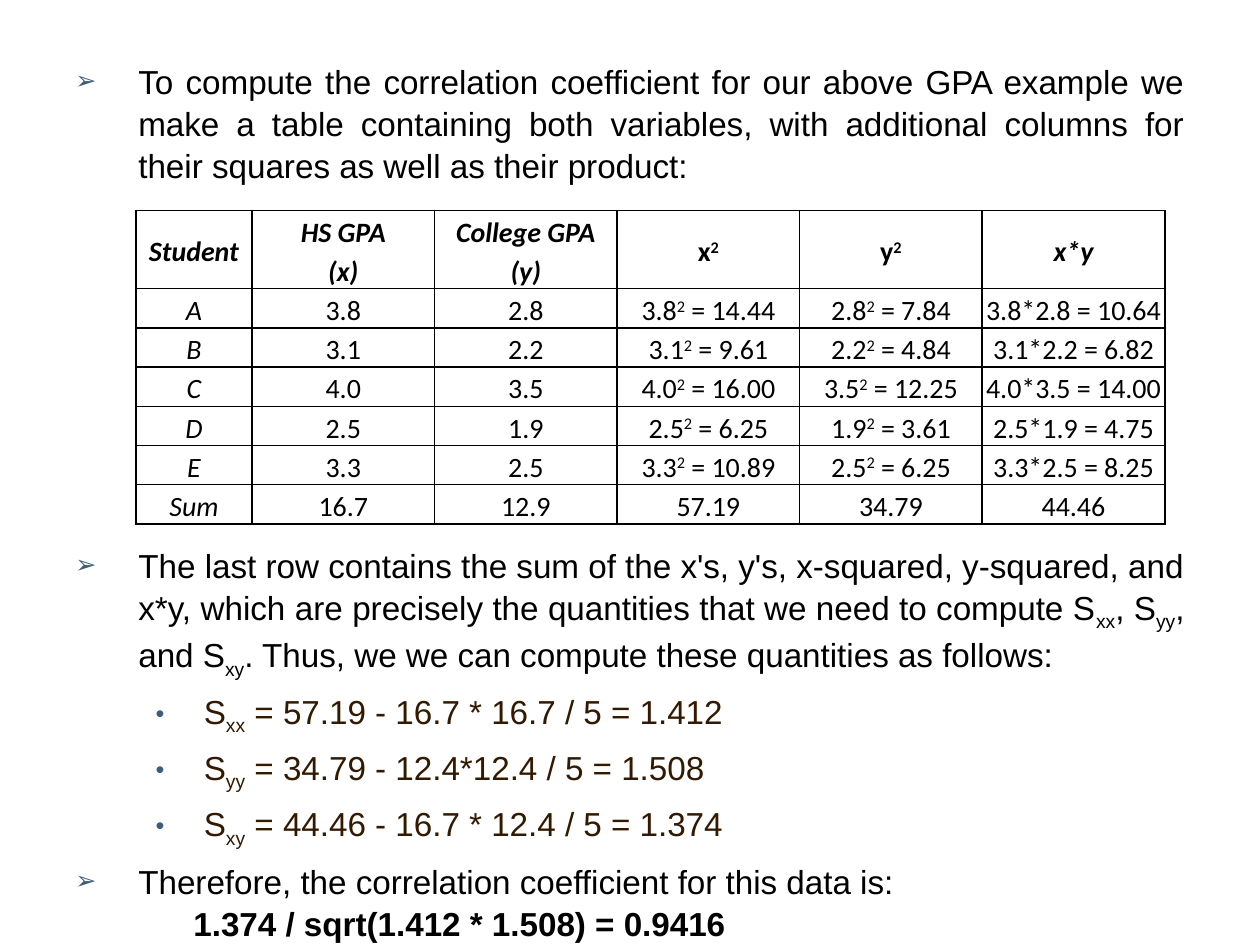
from dataclasses import dataclass

from lxml.etree import SubElement
from pptx import Presentation
from pptx.dml.color import RGBColor
from pptx.enum.text import MSO_ANCHOR as Anchor, PP_ALIGN as Align
from pptx.oxml.ns import qn
from pptx.util import Cm, Pt

BLACK = RGBColor(0x00, 0x00, 0x00)
BROWN = RGBColor(0x32, 0x19, 0x00)
SLATE = RGBColor(0x3E, 0x5D, 0x78)

BODY_FONT = {"name": "Arial", "size": Pt(19)}
CELL_FONT = {"name": "Calibri", "size": Pt(16)}
BODY_FORMAT = {"line_spacing": 1.05}
CELL_FORMAT = {"alignment": Align.CENTER, "line_spacing": 1.15, "space_after": Pt(10)}
CELL_LAYOUT = {
    "vertical_anchor": Anchor.MIDDLE,
    "margin_left": 0,
    "margin_right": 0,
    "margin_top": 0,
    "margin_bottom": 0,
}
SUBSCRIPT = -25000
SUPERSCRIPT = 30000


@dataclass(frozen=True)
class Level:
    left: Cm
    hanging: Cm
    before: Pt
    bullet: str = ""
    color: RGBColor = BLACK
    bold: bool = False
    align: Align = Align.JUSTIFY


@dataclass(frozen=True)
class Item:
    text: str
    level: Level


@dataclass(frozen=True)
class Student:
    name: str
    x: str
    y: str

    def cells(self) -> list[str]:
        x, y = float(self.x), float(self.y)
        return [
            self.name,
            self.x,
            self.y,
            f"{self.x}~2~ = {x * x:.2f}",
            f"{self.y}~2~ = {y * y:.2f}",
            f"{self.x}*{self.y} = {x * y:.2f}",
        ]


MAIN = Level(Cm(1.27), Cm(1.27), Pt(6), "➢")
SUB = Level(Cm(2.59), Cm(0.97), Pt(5), "•", BROWN)
CLOSING = Level(Cm(1.27), Cm(1.27), Pt(6), "➢", align=Align.LEFT)
RESULT = Level(Cm(2.38), Cm(0), Pt(0), bold=True, align=Align.LEFT)

INTRO = [
    Item("To compute the correlation coefficient for our above GPA example we make a table "
         "containing both variables, with additional columns for their squares as well as "
         "their product:", MAIN),
]
STEPS = [
    Item("The last row contains the sum of the x's, y's, x-squared, y-squared, and x*y, which "
         "are precisely the quantities that we need to compute S~xx~, S~yy~, and S~xy~. Thus, "
         "we we can compute these quantities as follows:", MAIN),
    Item("S~xx~ = 57.19 - 16.7 * 16.7 / 5 = 1.412", SUB),
    Item("S~yy~ = 34.79 - 12.4*12.4 / 5 = 1.508", SUB),
    Item("S~xy~ = 44.46 - 16.7 * 12.4 / 5 = 1.374", SUB),
    Item("Therefore, the correlation coefficient for this data is:", CLOSING),
    Item("1.374 / sqrt(1.412 * 1.508) = 0.9416", RESULT),
]
HEADER = ["Student", "HS GPA\n(x)", "College GPA\n(y)", "x~2~", "y~2~", "x*y"]
STUDENTS = [
    Student("A", "3.8", "2.8"),
    Student("B", "3.1", "2.2"),
    Student("C", "4.0", "3.5"),
    Student("D", "2.5", "1.9"),
    Student("E", "3.3", "2.5"),
]
SUMS = ["Sum", "16.7", "12.9", "57.19", "34.79", "44.46"]
SQUARE_HEADERS = (3, 4)
COLUMN_WIDTHS = [Cm(2.34)] + [Cm(3.68)] * 5
ROW_HEIGHT = Cm(0.79)


def apply(target, values: dict) -> None:
    for name, value in values.items():
        setattr(target, name, value)


def write(para, text: str, font: dict, color: RGBColor, shift: int) -> None:
    for line_number, line in enumerate(text.split("\n")):
        if line_number:
            para.add_line_break()
        for part_number, part in enumerate(line.split("~")):
            if not part:
                continue
            span = para.add_run()
            span.text = part
            apply(span.font, font)
            span.font.color.rgb = color
            if part_number % 2:
                span.font._element.set("baseline", str(shift))


def add_bullet(para, character: str) -> None:
    properties = para._p.get_or_add_pPr()
    SubElement(SubElement(properties, qn("a:buClr")), qn("a:srgbClr"), val=str(SLATE))
    SubElement(properties, qn("a:buSzPct"), val="76000")
    SubElement(properties, qn("a:buFont"), typeface="Arial")
    SubElement(properties, qn("a:buChar"), char=character)


def add_text(page, top: Cm, height: Cm, items: list[Item]) -> None:
    box = page.shapes.add_textbox(Cm(1.27), top, Cm(22.86), height)
    frame = box.text_frame
    frame.word_wrap = True
    for number, item in enumerate(items):
        para = frame.add_paragraph() if number else frame.paragraphs[0]
        level = item.level
        apply(para, BODY_FORMAT | {"alignment": level.align, "space_before": level.before})
        properties = para._p.get_or_add_pPr()
        properties.set("marL", str(level.left))
        properties.set("indent", str(-level.hanging))
        if level.bullet:
            add_bullet(para, level.bullet)
        write(para, item.text, BODY_FONT | {"bold": level.bold}, level.color, SUBSCRIPT)


def add_borders(cell) -> None:
    properties = cell._tc.get_or_add_tcPr()
    for side in ("lnL", "lnR", "lnT", "lnB"):
        line = SubElement(properties, qn(f"a:{side}"), w=str(Pt(1)))
        fill = SubElement(line, qn("a:solidFill"))
        SubElement(fill, qn("a:srgbClr"), val=str(BLACK))


def add_grades(page) -> None:
    rows = [HEADER, *(student.cells() for student in STUDENTS), SUMS]
    frame = page.shapes.add_table(
        len(rows), len(HEADER), Cm(2.74), Cm(4.24), sum(COLUMN_WIDTHS), ROW_HEIGHT * (len(rows) + 1)
    )
    table = frame.table
    apply(table, {"first_row": False, "horz_banding": False})
    for column, width in zip(table.columns, COLUMN_WIDTHS):
        column.width = width
    for row_number, texts in enumerate(rows):
        is_header = row_number == 0
        table.rows[row_number].height = ROW_HEIGHT * (2 if is_header else 1)
        for column_number, text in enumerate(texts):
            cell = table.cell(row_number, column_number)
            add_borders(cell)
            cell.fill.background()
            apply(cell, CELL_LAYOUT)
            para = cell.text_frame.paragraphs[0]
            apply(para, CELL_FORMAT)
            italic = column_number not in SQUARE_HEADERS if is_header else column_number == 0
            write(para, text, CELL_FONT | {"bold": is_header, "italic": italic}, BLACK, SUPERSCRIPT)


def main() -> None:
    deck = Presentation()
    apply(deck, {"slide_width": Cm(25.4), "slide_height": Cm(19.05)})
    page = deck.slides.add_slide(deck.slide_layouts[6])
    add_text(page, Cm(1.07), Cm(2.8), INTRO)
    add_text(page, Cm(10.82), Cm(7.9), STEPS)
    add_grades(page)
    deck.save("out.pptx")


if __name__ == "__main__":
    main()
